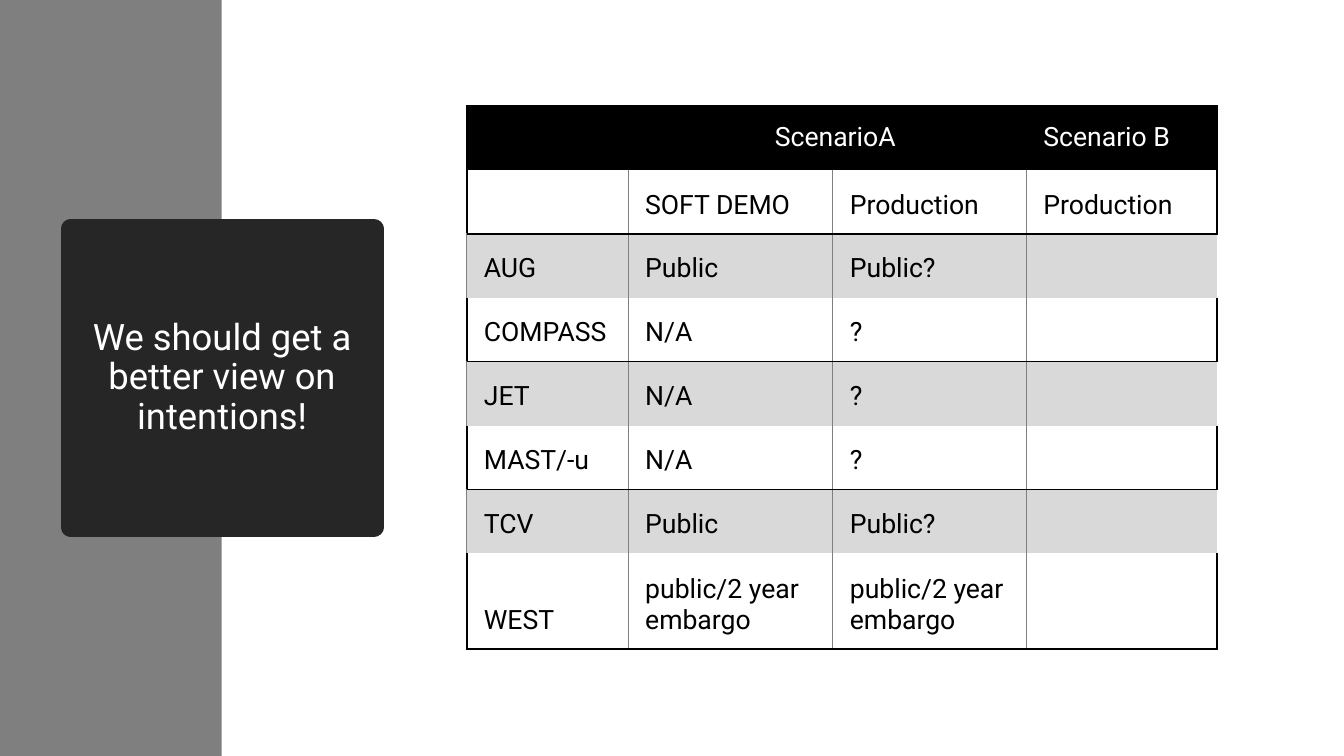
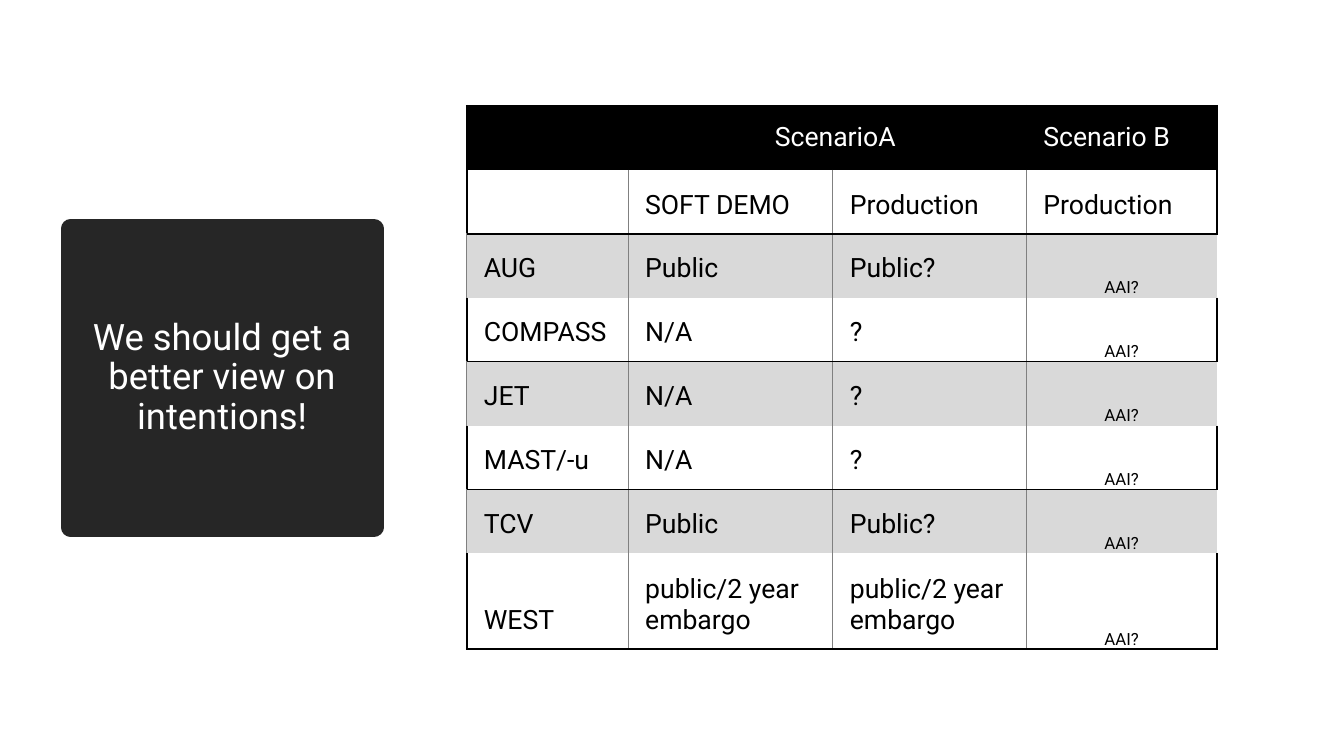
from dataclasses import dataclass

from lxml.etree import SubElement
from pptx import Presentation
from pptx.dml.color import RGBColor
from pptx.enum.shapes import MSO_SHAPE
from pptx.enum.text import MSO_ANCHOR, MSO_AUTO_SIZE, PP_ALIGN
from pptx.oxml import parse_xml
from pptx.oxml.ns import nsdecls, qn
from pptx.util import Inches, Pt

# Content
TITLE = "We should get a better view on intentions!"
HEADER = ["", "ScenarioA", "", "Scenario B"]
ROWS = [
    ["", "SOFT DEMO", "Production", "Production"],
    ["AUG", "Public", "Public?"],
    ["COMPASS", "N/A", "?"],
    ["JET", "N/A", "?"],
    ["MAST/-u", "N/A", "?"],
    ["TCV", "Public", "Public?"],
    ["WEST", "public/2 year embargo", "public/2 year embargo"],
]
SLIDES = [
    {"sidebar": True, "scenario_b": ""},
    {"sidebar": False, "scenario_b": "AAI?"},
]


@dataclass(frozen=True)
class Theme:
    font: str = "Roboto"
    title_size: float = 26
    cell_size: float = 19
    note_size: float = 12
    outline: float = 13.75
    thick: float = 1.5
    thin: float = 0.5
    black: str = "000000"
    white: str = "FFFFFF"
    box: str = "262626"
    sidebar: str = "7F7F7F"
    grid: str = "808080"
    band: str = "D9D9D9"


T = Theme()
RULE = (T.black, T.thick)
GRID = (T.grid, T.thin)
NO_STYLE = "{2D5ABB26-0587-4C30-8999-92F81FD0307C}"

# Layout, in inches
SLIDE_W, SLIDE_H = 13.33, 7.5
SIDEBAR_W = 2.2
TITLE_BOX = (0.7, 2.27, 3.01, 2.96)
TABLE_X, TABLE_Y, TABLE_H = 4.63, 1.05, 5.39
COL_WIDTHS = (1.6, 2.03, 1.92, 1.89)
LAST_ROW_H = 0.95
CELL_INSETS = (0.17, 0.13, 0.01, 0.13)
NOTE_INSETS = (0.01, 0.01, 0.01, 0)


def paint(fill, color):
    fill.solid()
    fill.fore_color.rgb = RGBColor.from_string(color)


def write(tf, text, size, color, align):
    p = tf.paragraphs[0]
    p.alignment = align
    r = p.add_run()
    r.text = text
    r.font.name = T.font
    r.font.size = Pt(size)
    r.font.color.rgb = RGBColor.from_string(color)
    return p


def add_sidebar(s):
    sp = s.shapes.add_shape(MSO_SHAPE.RECTANGLE, 0, 0,
                            Inches(SIDEBAR_W), Inches(SLIDE_H))
    sp.shadow.inherit = False
    paint(sp.fill, T.sidebar)
    sp.line.fill.background()
    s.shapes.title.element.addprevious(sp.element)  # behind the title


def format_title(sp):
    sp.left, sp.top, sp.width, sp.height = map(Inches, TITLE_BOX)
    paint(sp.fill, T.box)
    paint(sp.line.fill, T.box)
    sp.line.width = Pt(T.outline)
    # A round join softens the corners of the box
    SubElement(sp.element.spPr.find(qn("a:ln")), qn("a:round"))
    tf = sp.text_frame
    tf.word_wrap = True
    tf.auto_size = MSO_AUTO_SIZE.NONE
    tf.vertical_anchor = MSO_ANCHOR.MIDDLE
    p = write(tf, TITLE, T.title_size, T.white, PP_ALIGN.CENTER)
    p.line_spacing = 0.9


def set_borders(cell, borders):
    """Draw the given sides; leave the others empty."""
    tc_pr = cell._tc.get_or_add_tcPr()
    for i, side in enumerate("LRTB"):
        color, width = borders.get(side, (None, 0))
        fill = (f'<a:solidFill><a:srgbClr val="{color}"/></a:solidFill>'
                if color else "<a:noFill/>")
        tc_pr.insert(i, parse_xml(
            f'<a:ln{side} {nsdecls("a")} w="{Pt(width)}">{fill}</a:ln{side}>'))


def cell_borders(row, col):
    last = len(COL_WIDTHS) - 1
    if row == 0:
        return {"L": RULE, "R": RULE, "T": RULE}
    if row % 2:  # plain rows: ruled outside and below
        return {"L": GRID if col else RULE,
                "R": GRID if col < last else RULE, "B": RULE}
    borders = {"L": GRID, "T": RULE}  # shaded rows: open on the right
    if col < last:
        borders["R"] = GRID
    return borders


def format_cell(cell, row, col, text, is_note):
    head = row == 0
    if head:
        paint(cell.fill, T.black)
    elif row % 2:
        cell.fill.background()
    else:
        paint(cell.fill, T.band)
    set_borders(cell, cell_borders(row, col))
    insets = NOTE_INSETS if is_note else CELL_INSETS
    (cell.margin_left, cell.margin_top,
     cell.margin_right, cell.margin_bottom) = map(Inches, insets)
    cell.vertical_anchor = MSO_ANCHOR.MIDDLE if head else MSO_ANCHOR.BOTTOM
    if text:
        centred = is_note or cell.is_merge_origin
        write(cell.text_frame, text,
              T.note_size if is_note else T.cell_size,
              T.white if head else T.black,
              PP_ALIGN.CENTER if centred else PP_ALIGN.LEFT)


def add_scenarios(s, scenario_b):
    grid = [HEADER] + ROWS
    n = len(grid)
    frame = s.shapes.add_table(n, len(COL_WIDTHS), Inches(TABLE_X), Inches(TABLE_Y),
                               Inches(sum(COL_WIDTHS)), Inches(TABLE_H))
    table = frame.table
    table.horz_banding = False
    table._tbl.tblPr.find(qn("a:tableStyleId")).text = NO_STYLE
    for column, width in zip(table.columns, COL_WIDTHS):
        column.width = Inches(width)
    row_h = (TABLE_H - LAST_ROW_H) / (n - 1)
    for i, row in enumerate(table.rows):
        row.height = Inches(row_h if i < n - 1 else LAST_ROW_H)
    table.cell(0, 1).merge(table.cell(0, 2))
    for i, texts in enumerate(grid):
        for j in range(len(COL_WIDTHS)):
            is_note = j >= len(texts)
            text = scenario_b if is_note else texts[j]
            format_cell(table.cell(i, j), i, j, text, is_note)


def main():
    prs = Presentation()
    prs.slide_width, prs.slide_height = Inches(SLIDE_W), Inches(SLIDE_H)
    title_only = prs.slide_layouts.get_by_name("Title Only")
    for content in SLIDES:
        s = prs.slides.add_slide(title_only)
        format_title(s.shapes.title)
        if content["sidebar"]:
            add_sidebar(s)
        add_scenarios(s, content["scenario_b"])
    prs.save("out.pptx")


if __name__ == "__main__":
    main()
